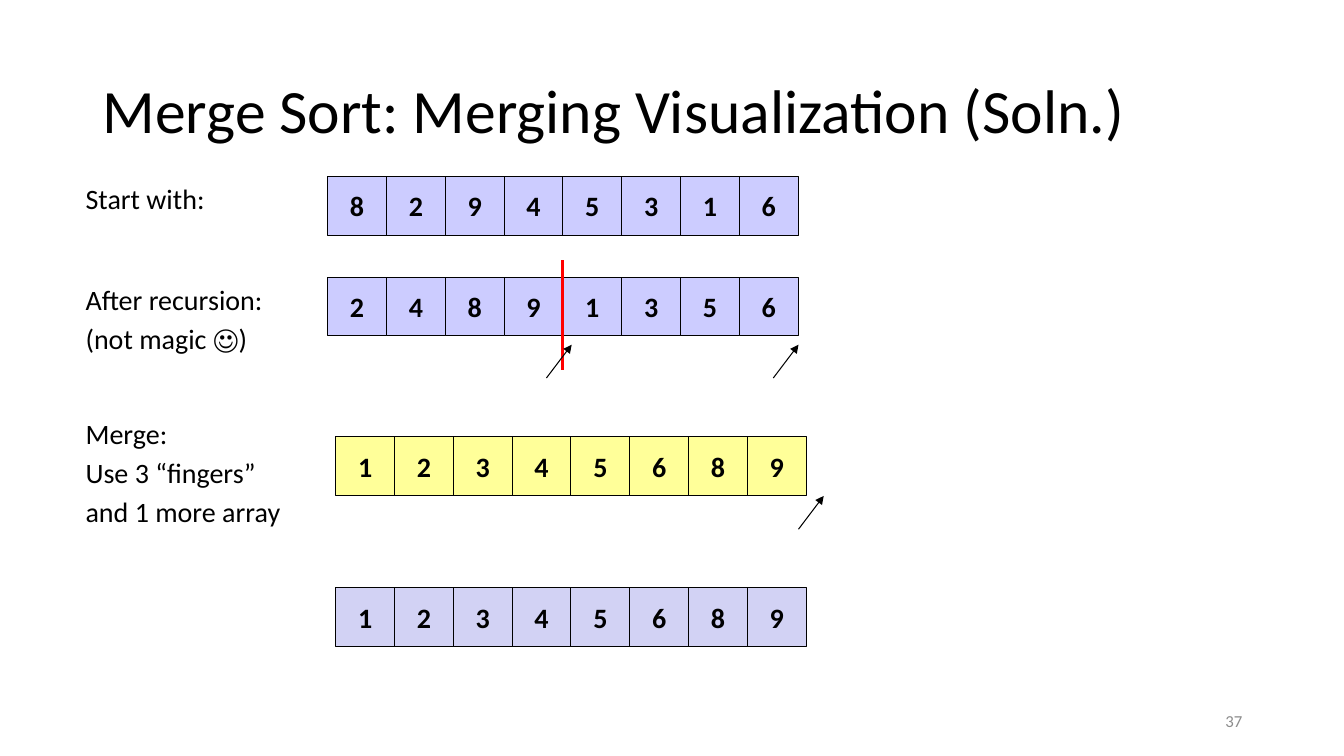
"""Build the merge sort merging slide."""
from dataclasses import dataclass

from lxml.etree import SubElement
from pptx import Presentation
from pptx.dml.color import RGBColor
from pptx.enum.shapes import MSO_CONNECTOR, MSO_SHAPE
from pptx.enum.text import MSO_ANCHOR, PP_ALIGN
from pptx.oxml.ns import qn
from pptx.shapes.base import BaseShape
from pptx.slide import Slide
from pptx.text.text import _Paragraph as Paragraph
from pptx.util import Inches, Pt

FONT = "Calibri"
BLACK = "000000"
CELL = 7 / 12
HANGING = 0.38


@dataclass
class ArrayRow:
    left: float
    top: float
    values: str
    fill: str


@dataclass
class Label:
    left: float
    top: float
    width: float
    height: float
    lines: tuple[str, ...]
    size: int = 20
    color: str = BLACK
    align: PP_ALIGN = PP_ALIGN.LEFT
    anchor: MSO_ANCHOR = MSO_ANCHOR.TOP
    space_before: int = 0
    line_spacing: float = 1.0
    hanging: float = 0


@dataclass
class Stroke:
    start: tuple[float, float]
    end: tuple[float, float]
    color: str = BLACK
    width: float = 0.75
    arrow: bool = True


def side_label(top: float, width: float, height: float, *lines: str) -> Label:
    return Label(0.75, top, width, height, lines, space_before=4, hanging=HANGING)


def finger(left: float, bottom: float) -> Stroke:
    return Stroke((left, bottom), (left + 0.25, bottom - 0.33))


LABELS = (
    Label(0.92, 0.4, 11.5, 1.45, ("Merge Sort: Merging Visualization (Soln.)",),
          size=44, anchor=MSO_ANCHOR.MIDDLE, line_spacing=0.9),
    side_label(1.75, 1.58, 1.08, "Start with:"),
    side_label(2.75, 2.42, 1.08, "After recursion:", "(not magic ☺)"),
    side_label(4.08, 2.42, 1.33, "Merge:", "Use 3 “fingers”", "and 1 more array"),
    Label(9.42, 6.95, 3, 0.4, ("37",), size=12, color="8C8C8C",
          align=PP_ALIGN.RIGHT, anchor=MSO_ANCHOR.MIDDLE),
)
ROWS = (
    ArrayRow(3.25, 1.75, "82945316", "CCCCFF"),
    ArrayRow(3.25, 2.75, "24891356", "CCCCFF"),
    ArrayRow(3.33, 4.33, "12345689", "FFFF99"),
    ArrayRow(3.33, 5.83, "12345689", "D2D2F4"),
)
STROKES = (
    Stroke((5.58, 2.58), (5.58, 3.67), "FF0000", 2.25, arrow=False),
    finger(5.42, 3.75),
    finger(7.67, 3.75),
    finger(7.92, 5.25),
)


def rgb(color: str) -> RGBColor:
    return RGBColor.from_string(color)


def add_span(para: Paragraph, text: str, size: int, color: str, bold: bool = False) -> None:
    span = para.add_run()
    span.text = text
    span.font.name = FONT
    span.font.size = Pt(size)
    span.font.bold = bold
    span.font.color.rgb = rgb(color)


def draw_label(page: Slide, label: Label) -> BaseShape:
    box = page.shapes.add_textbox(Inches(label.left), Inches(label.top),
                                  Inches(label.width), Inches(label.height))
    frame = box.text_frame
    frame.word_wrap = True
    frame.vertical_anchor = label.anchor
    for index, line in enumerate(label.lines):
        para = frame.add_paragraph() if index else frame.paragraphs[0]
        para.alignment = label.align
        para.space_before = Pt(label.space_before)
        para.line_spacing = label.line_spacing
        if label.hanging:
            properties = para._p.get_or_add_pPr()
            properties.set("marL", str(Inches(label.hanging)))
            properties.set("indent", str(-Inches(label.hanging)))
        add_span(para, line, label.size, label.color)
    return box


def draw_row(page: Slide, row: ArrayRow) -> None:
    for index, value in enumerate(row.values):
        box = page.shapes.add_shape(MSO_SHAPE.RECTANGLE, Inches(row.left + index * CELL),
                                    Inches(row.top), Inches(CELL), Inches(CELL))
        box.shadow.inherit = False
        box.fill.solid()
        box.fill.fore_color.rgb = rgb(row.fill)
        box.line.color.rgb = rgb(BLACK)
        box.line.width = Pt(0.75)
        frame = box.text_frame
        frame.word_wrap = False
        frame.vertical_anchor = MSO_ANCHOR.MIDDLE
        para = frame.paragraphs[0]
        para.alignment = PP_ALIGN.CENTER
        add_span(para, value, 20, BLACK, bold=True)


def draw_stroke(page: Slide, stroke: Stroke) -> None:
    points = [Inches(value) for value in (*stroke.start, *stroke.end)]
    connector = page.shapes.add_connector(MSO_CONNECTOR.STRAIGHT, *points)
    connector.line.color.rgb = rgb(stroke.color)
    connector.line.width = Pt(stroke.width)
    if stroke.arrow:
        SubElement(connector.line._get_or_add_ln(), qn("a:tailEnd"), type="triangle")
    SubElement(connector._element.spPr, qn("a:effectLst"))


def main() -> None:
    deck = Presentation()
    deck.slide_width = Inches(13.33)
    deck.slide_height = Inches(7.5)
    page = deck.slides.add_slide(deck.slide_layouts[6])
    for label in LABELS:
        draw_label(page, label)
    for row in ROWS:
        draw_row(page, row)
    for stroke in STROKES:
        draw_stroke(page, stroke)
    deck.save("out.pptx")


if __name__ == "__main__":
    main()
